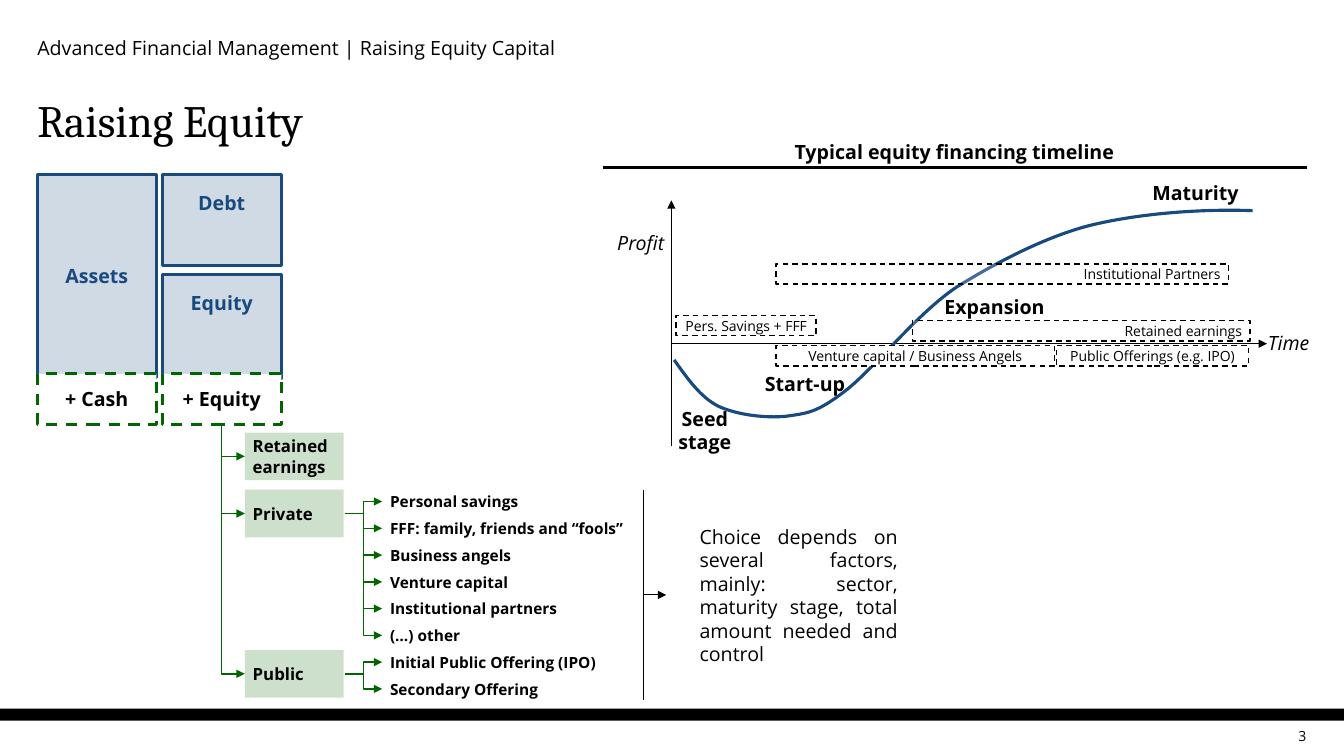
from lxml.etree import SubElement
from pptx import Presentation
from pptx.dml.color import RGBColor
from pptx.enum.dml import MSO_LINE
from pptx.enum.shapes import MSO_CONNECTOR, MSO_SHAPE
from pptx.enum.text import MSO_ANCHOR, PP_ALIGN
from pptx.oxml.ns import qn
from pptx.util import Cm, Pt

BLACK = RGBColor(0, 0, 0)
WHITE = RGBColor(255, 255, 255)
BLUE = RGBColor(0x18, 0x49, 0x7F)
GREEN = RGBColor(0, 0x66, 0)
LEFT, MID, RIGHT, EVEN = PP_ALIGN.LEFT, PP_ALIGN.CENTER, PP_ALIGN.RIGHT, PP_ALIGN.JUSTIFY
TOP, HALF, BASE = MSO_ANCHOR.TOP, MSO_ANCHOR.MIDDLE, MSO_ANCHOR.BOTTOM


class Deck:
    font = "Open Sans"

    def __init__(self):
        self.show = Presentation()
        self.show.slide_width, self.show.slide_height = Cm(33.87), Cm(19.05)
        self.slide = self.show.slides.add_slide(self.show.slide_layouts[6])
        self.shapes = self.slide.shapes

    def letter(self, shape, words, size, color=BLACK, bold=False, slant=False,
               align=MID, anchor=HALF, side=0, top=0, base=0, font=None, lead=None):
        frame = shape.text_frame
        frame.text = words
        frame.word_wrap = True
        frame.vertical_anchor = anchor
        frame.margin_left = frame.margin_right = Cm(side)
        frame.margin_top, frame.margin_bottom = Cm(top), Cm(base)
        para = frame.paragraphs[0]
        para.alignment = align
        if lead:
            para.line_spacing = lead
        for run in para.runs:
            run.font.name = font or self.font
            run.font.size = Pt(size)
            run.font.bold = bold
            run.font.italic = slant
            run.font.color.rgb = color

    def label(self, area, words, size=14, **style):
        self.letter(self.shapes.add_textbox(*map(Cm, area)), words, size, **style)

    def box(self, area, fill, words="", size=14, clear=False, edge=None, width=1,
            dash=False, **style):
        shape = self.shapes.add_shape(MSO_SHAPE.RECTANGLE, *map(Cm, area))
        shape.shadow.inherit = False
        shape.fill.solid()
        shape.fill.fore_color.rgb = fill
        if clear:
            tint = shape._element.spPr.find(qn("a:solidFill"))[0]
            SubElement(tint, qn("a:alpha")).set("val", "20000")
        if edge is None:
            shape.line.fill.background()
        else:
            shape.line.color.rgb = edge
            shape.line.width = Pt(width)
            if dash:
                shape.line.dash_style = MSO_LINE.DASH
        if words:
            self.letter(shape, words, size, side=0.2, **style)

    def line(self, start, end, color=BLACK, width=0.75, arrow=False,
             kind=MSO_CONNECTOR.STRAIGHT):
        link = self.shapes.add_connector(kind, *map(Cm, start + end))
        link.line.color.rgb = color
        link.line.width = Pt(width)
        props = link._element.spPr
        if arrow:
            SubElement(props.find(qn("a:ln")), qn("a:tailEnd")).set("type", "triangle")
        SubElement(props, qn("a:effectLst"))
        return props

    def fork(self, start, end):
        self.line(start, end, GREEN, 1, True, MSO_CONNECTOR.ELBOW)

    def drop(self, start, end):
        midx, midy = (start[0] + end[0]) / 2, (start[1] + end[1]) / 2
        wide, high = (end[1] - start[1]) / 2, (end[0] - start[0]) / 2
        props = self.line((midx - wide, midy - high), (midx + wide, midy + high),
                          GREEN, 1, True, MSO_CONNECTOR.ELBOW)
        props.find(qn("a:prstGeom")).set("prst", "bentConnector2")
        frame = props.find(qn("a:xfrm"))
        frame.set("rot", "16200000")
        frame.set("flipH", "1")

    def curve(self, points, color, width):
        spots = [(Cm(x), Cm(y)) for x, y in points]
        draft = self.shapes.build_freeform(*spots[0])
        draft.add_line_segments(spots[1:], close=False)
        shape = draft.convert_to_shape()
        shape.shadow.inherit = False
        shape.fill.background()
        shape.line.color.rgb = color
        shape.line.width = Pt(width)
        trace = next(shape._element.iter(qn("a:path")))
        steps = trace.findall(qn("a:lnTo"))
        for first in range(0, len(steps), 3):
            bend = SubElement(trace, qn("a:cubicBezTo"))
            for step in steps[first:first + 3]:
                bend.append(step[0])
                trace.remove(step)


def frame(deck):
    deck.label((31.6, 18.24, 1.32, 0.61), "3", 10, align=RIGHT)
    deck.box((0, 17.86, 33.87, 0.3), BLACK)
    deck.label((0.94, 0.76, 32, 0.89),
               "Advanced Financial Management | Raising Equity Capital", align=EVEN)
    deck.label((0.94, 1.68, 32, 2.01), "Raising Equity", 32, align=EVEN,
               anchor=BASE, font="Cambria")


def balance(deck):
    blue = dict(clear=True, edge=BLUE, width=2, color=BLUE, bold=True)
    deck.box((0.94, 4.39, 3, 5.13), BLUE, "Assets", **blue)
    for words, y, high in (("Equity", 6.91, 2.64), ("Debt", 4.39, 2.31)):
        deck.box((4.09, y, 3, high), BLUE, words, anchor=TOP, top=0.41, base=0.41, **blue)
    for words, x in (("+ Equity", 4.09), ("+ Cash", 0.94)):
        deck.box((x, 9.42, 3, 1.27), WHITE, words, edge=GREEN, width=2, dash=True, bold=True)


def sources(deck):
    tree = (("Retained earnings", 10.9, ()),
            ("Private", 12.34, ("Personal savings", "FFF: family, friends and “fools”",
                                "Business angels", "Venture capital",
                                "Institutional partners", "(…) other")),
            ("Public", 16.38, ("Initial Public Offering (IPO)", "Secondary Offering")))
    row = 0
    for words, y, leaves in tree:
        deck.drop((5.59, 10.69), (6.17, y + 0.6))
        deck.box((6.17, y, 2.49, 1.2), GREEN, words, 12, clear=True, bold=True, align=LEFT)
        for leaf in leaves:
            high = 12.34 + row * 4.72 / 7
            wide = 6.6 if leaf.startswith("FFF") else 6.1
            deck.box((9.63, high, wide, 0.61), WHITE, leaf, 11, clear=True,
                     bold=True, align=LEFT)
            deck.fork((8.69, y + 0.6), (9.63, high + 0.3))
            row += 1
    deck.line((16.21, 14.99), (16.79, 14.99), arrow=True)
    deck.line((16.21, 17.65), (16.21, 12.34))
    deck.label((17.63, 12.34, 5, 5.31),
               "Choice depends on several factors, mainly: sector, maturity stage, "
               "total amount needed and control", align=EVEN)


def timeline(deck):
    deck.line((16.94, 8.66), (31.93, 8.66), arrow=True)
    deck.label((31.45, 8.2, 1.55, 0.89), "Time", slant=True, align=RIGHT)
    deck.line((16.92, 11.25), (16.92, 5.05), arrow=True)
    deck.label((15.19, 5.11, 1.55, 2.01), "Profit", slant=True, align=RIGHT)
    deck.curve([(16.99, 9.07),
                (17.32, 9.53), (17.65, 10.01), (18.11, 10.24),
                (18.59, 10.46), (19.3, 10.54), (19.81, 10.49),
                (20.35, 10.41), (20.57, 10.41), (21.29, 9.86),
                (22, 9.32), (23.09, 7.92), (24.1, 7.24),
                (24.92, 6.73), (26.19, 6.02), (27.43, 5.69),
                (28.68, 5.38), (30.25, 5.26), (31.57, 5.31)], BLUE, 2.25)
    for words, x, y, wide in (("Seed stage", 16.99, 10.39, 1.55),
                              ("Start-up", 19.25, 9.22, 2.08),
                              ("Expansion", 23.72, 7.29, 2.69),
                              ("Maturity", 28.91, 4.42, 2.44)):
        deck.label((x, y, wide, 0.89), words, bold=True)
    for words, x, y, wide, clear in (
            ("Pers. Savings + FFF", 17.04, 7.95, 3.53, False),
            ("Venture capital / Business Angels", 19.56, 8.71, 7.01, False),
            ("Public Offerings (e.g. IPO)", 26.62, 8.71, 4.85, False),
            ("Institutional Partners", 19.56, 6.65, 11.4, True),
            ("Retained earnings", 22.99, 8.08, 8.51, True)):
        deck.box((x, y, wide, 0.51), WHITE, words, 10, clear=clear, edge=BLACK,
                 dash=True, align=RIGHT if clear else MID)
    deck.label((15.19, 3.43, 17.73, 0.79), "Typical equity financing timeline",
               bold=True, anchor=BASE, base=0.1, lead=0.8)
    deck.line((15.19, 4.22), (32.94, 4.22), width=1.5)


def main():
    deck = Deck()
    for part in (frame, balance, sources, timeline):
        part(deck)
    deck.show.save("out.pptx")


if __name__ == "__main__":
    main()
